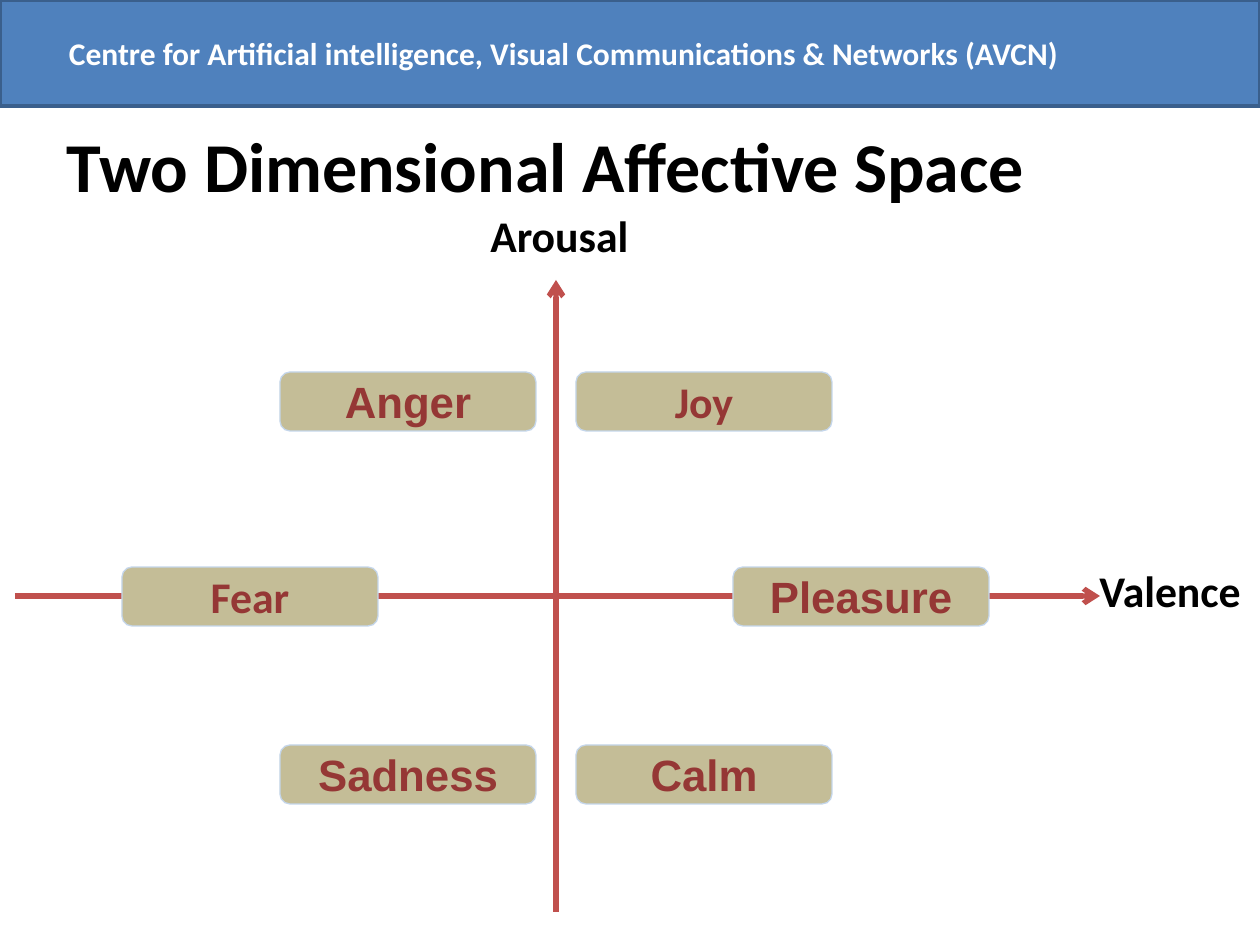
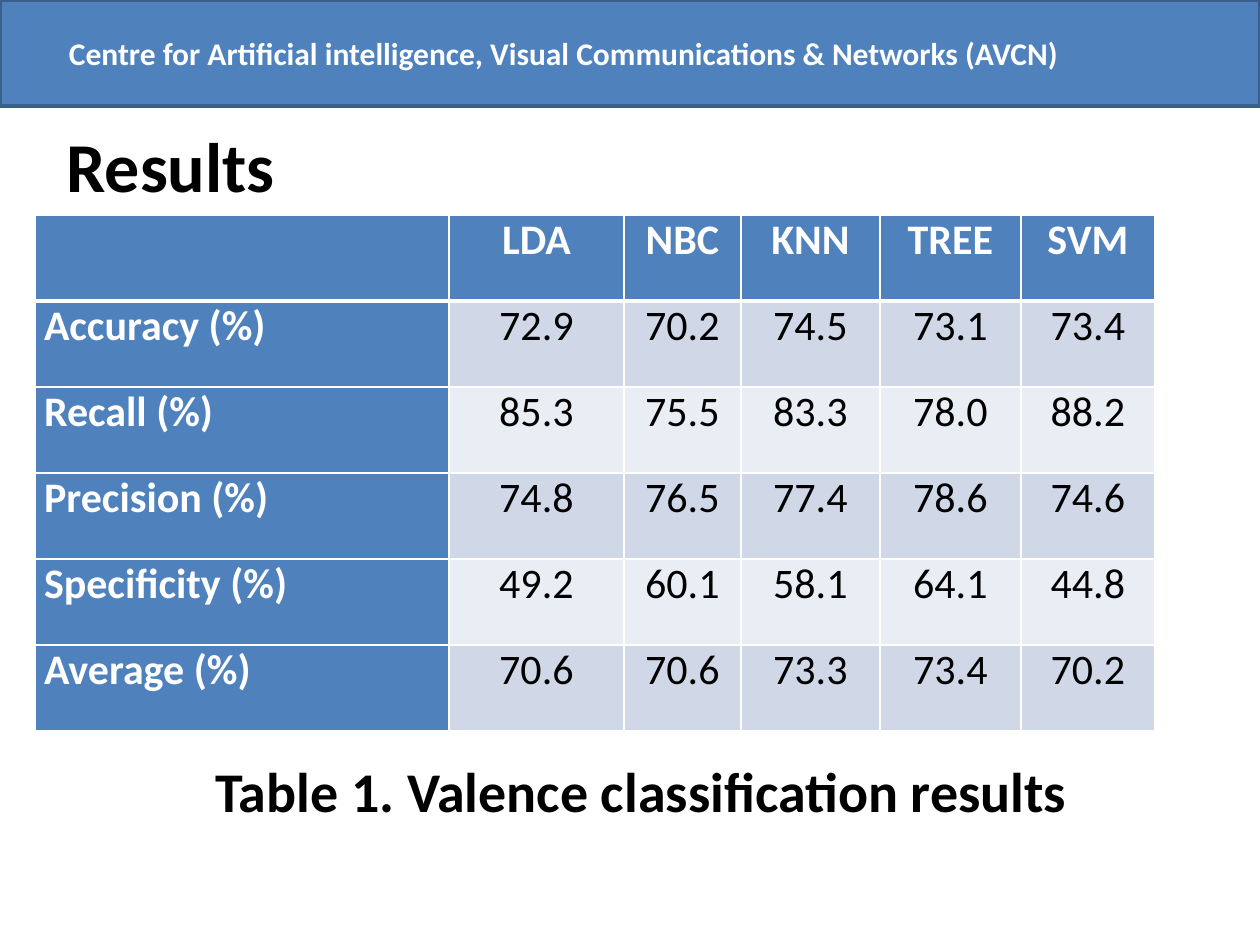
from lxml.etree import SubElement
from pptx import Presentation
from pptx.dml.color import RGBColor
from pptx.enum.shapes import MSO_CONNECTOR, MSO_SHAPE
from pptx.enum.text import MSO_ANCHOR, MSO_AUTO_SIZE, PP_ALIGN
from pptx.oxml import parse_xml
from pptx.oxml.ns import nsdecls, qn
from pptx.util import Pt

PX = 7257  # EMU in one px, at 126 px to the inch
COLORS = {
    "band": "4F81BD", "band_line": "3A5F8C", "white": "FFFFFF", "black": "000000",
    "axis": "C0504D", "emotion": "C4BD97", "emotion_line": "C4D6EB",
    "emotion_text": "953735", "row_odd": "D0D8E8", "row_even": "E9EDF4",
}
RGB = {name: RGBColor.from_string(value) for name, value in COLORS.items()}


def write(frame, text, size=25, color="black", bold=True, font="Calibri",
          align=PP_ALIGN.LEFT, anchor=MSO_ANCHOR.TOP):
    frame.word_wrap = True
    frame.vertical_anchor = anchor
    paragraph = frame.paragraphs[0]
    paragraph.alignment = align
    run = paragraph.add_run()
    run.text = text
    run.font.size = Pt(size)
    run.font.bold = bold
    run.font.name = font
    run.font.color.rgb = RGB[color]


def add_box(slide, kind, left, top, width, height, fill, line, line_width):
    shape = slide.shapes.add_shape(kind, left * PX, top * PX, width * PX, height * PX)
    shape.shadow.inherit = False
    shape.fill.solid()
    shape.fill.fore_color.rgb = RGB[fill]
    shape.line.color.rgb = RGB[line]
    shape.line.width = Pt(line_width)
    return shape


presentation = Presentation()
presentation.slide_width = 1260 * PX
presentation.slide_height = 945 * PX

# Shared band and title
slides = []
for title_text in ("Two Dimensional Affective Space", "Results"):
    slide = presentation.slides.add_slide(presentation.slide_layouts[5])
    band = add_box(slide, MSO_SHAPE.RECTANGLE, 0, 0, 1260, 106, "band", "band_line", 2)
    band.text_frame.margin_left = 69 * PX
    write(band.text_frame,
          "Centre for Artificial intelligence, Visual Communications & Networks (AVCN)",
          size=18, color="white", anchor=MSO_ANCHOR.MIDDLE)
    title = slide.shapes.title
    title.left, title.top, title.width, title.height = 54 * PX, 116 * PX, 1190 * PX, 97 * PX
    title.text_frame.auto_size = MSO_AUTO_SIZE.NONE
    write(title.text_frame, title_text, size=40)
    slides.append(slide)
space_slide, results_slide = slides

# Axes of the affective space
for start_x, start_y, end_x, end_y in ((15, 596, 1100, 596), (556, 912, 556, 280)):
    axis = space_slide.shapes.add_connector(
        MSO_CONNECTOR.STRAIGHT, start_x * PX, start_y * PX, end_x * PX, end_y * PX)
    axis.line.color.rgb = RGB["axis"]
    axis.line.width = Pt(3)
    SubElement(axis.line._get_or_add_ln(), qn("a:tailEnd"), type="arrow")
    SubElement(axis._element.spPr, qn("a:effectLst"))

# Axis names and table caption
for slide, text, left, top, width, height, size in (
        (space_slide, "Arousal", 478, 203, 227, 66, 25),
        (space_slide, "Valence", 1087, 558, 186, 66, 25),
        (results_slide, "Table 1. Valence classification results", 203, 750, 886, 81, 32)):
    label = slide.shapes.add_textbox(left * PX, top * PX, width * PX, height * PX)
    write(label.text_frame, text, size=size)

# Emotions
for text, left, top, font in (
        ("Anger", 280, 372, "Arial"), ("Joy", 576, 372, "Calibri"),
        ("Fear", 122, 567, "Calibri"), ("Pleasure", 733, 567, "Arial"),
        ("Sadness", 280, 745, "Arial"), ("Calm", 576, 745, "Arial")):
    emotion = add_box(space_slide, MSO_SHAPE.ROUNDED_RECTANGLE, left, top, 256, 59,
                      "emotion", "emotion_line", 0.75)
    frame = emotion.text_frame
    frame.margin_left = frame.margin_top = frame.margin_right = frame.margin_bottom = 0
    write(frame, text, color="emotion_text", font=font,
          align=PP_ALIGN.CENTER, anchor=MSO_ANCHOR.MIDDLE)

# Results table
rows = (
    ("", "LDA", "NBC", "KNN", "TREE", "SVM"),
    ("Accuracy (%)", "72.9", "70.2", "74.5", "73.1", "73.4"),
    ("Recall (%)", "85.3", "75.5", "83.3", "78.0", "88.2"),
    ("Precision (%)", "74.8", "76.5", "77.4", "78.6", "74.6"),
    ("Specificity (%)", "49.2", "60.1", "58.1", "64.1", "44.8"),
    ("Average (%)", "70.6", "70.6", "73.3", "73.4", "70.2"),
)
column_widths = (414, 175, 117, 139, 141, 134)
table = results_slide.shapes.add_table(
    len(rows), len(column_widths), 35 * PX, 215 * PX, sum(column_widths) * PX, 516 * PX).table
for column, width in zip(table.columns, column_widths):
    column.width = width * PX

for row_index, row in enumerate(rows):
    table.rows[row_index].height = 86 * PX
    for column_index, text in enumerate(row):
        cell = table.cell(row_index, column_index)
        cell.margin_left = cell.margin_right = 9 * PX
        cell.margin_top = cell.margin_bottom = 0
        for side in "LRTB":
            below_header = (row_index, side) in ((0, "B"), (1, "T"))
            cell._tc.get_or_add_tcPr().append(parse_xml(
                f'<a:ln{side} {nsdecls("a")} w="{Pt(3 if below_header else 1)}"><a:solidFill>'
                f'<a:srgbClr val="{COLORS["white"]}"/></a:solidFill></a:ln{side}>'))
        is_header = row_index == 0 or column_index == 0
        fill = "band" if is_header else "row_odd" if row_index % 2 else "row_even"
        cell.fill.solid()
        cell.fill.fore_color.rgb = RGB[fill]
        if text:
            write(cell.text_frame, text, size=24, bold=is_header,
                  color="white" if is_header else "black",
                  align=PP_ALIGN.CENTER if column_index else PP_ALIGN.LEFT)

presentation.save("out.pptx")
